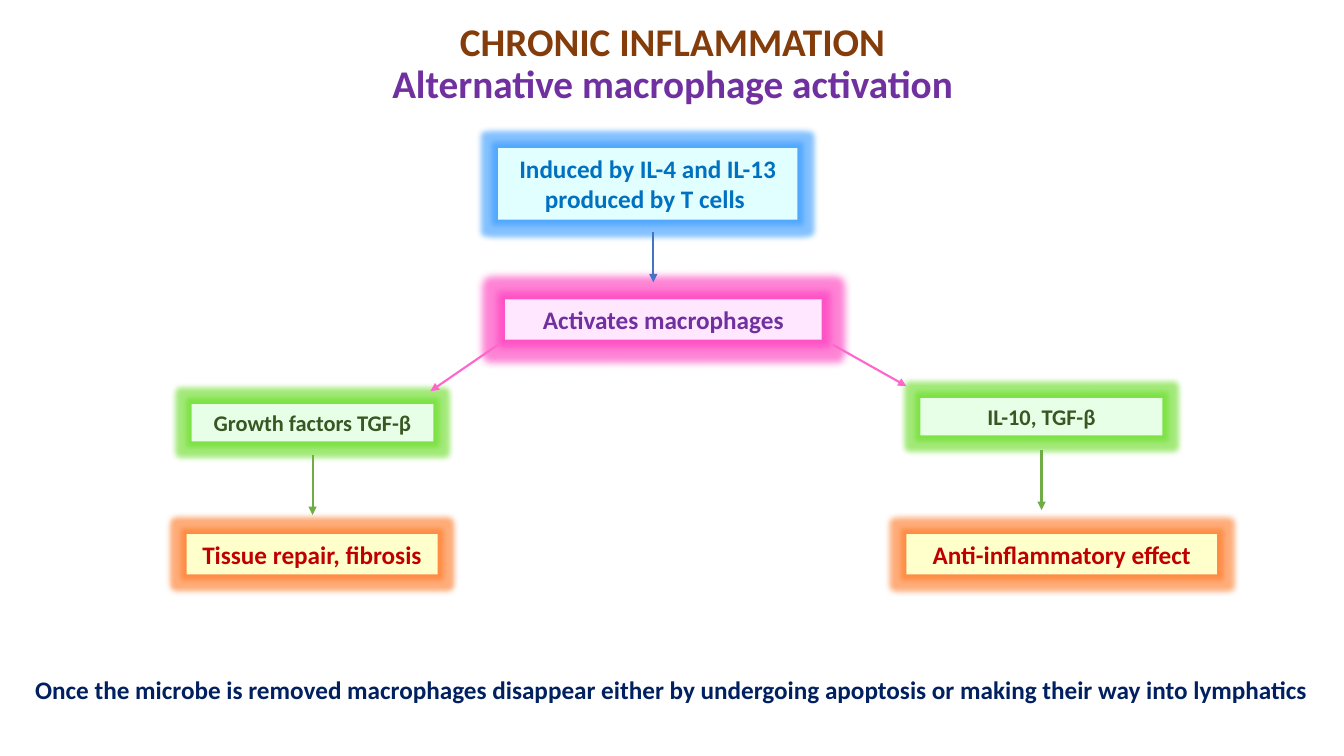
from dataclasses import dataclass

from lxml import etree
from pptx import Presentation
from pptx.dml.color import RGBColor
from pptx.enum.shapes import MSO_CONNECTOR, MSO_SHAPE
from pptx.enum.text import MSO_ANCHOR, MSO_AUTO_SIZE, PP_ALIGN
from pptx.oxml.ns import qn
from pptx.util import Inches, Pt

RECT = MSO_SHAPE.RECTANGLE
STRAIGHT = MSO_CONNECTOR.STRAIGHT
TOP, MIDDLE = MSO_ANCHOR.TOP, MSO_ANCHOR.MIDDLE
LEFT, CENTER = PP_ALIGN.LEFT, PP_ALIGN.CENTER
FIT_SHAPE = MSO_AUTO_SIZE.SHAPE_TO_FIT_TEXT


@dataclass(frozen=True)
class BoxStyle:
    fill: str
    text: str
    size: int
    glow: str
    radius: int = 8


@dataclass(frozen=True)
class Theme:
    font: str = "Calibri"
    title_size: int = 28
    body_size: int = 18
    line_width: float = 1.5
    title: str = "843C0B"
    subtitle: str = "7030A0"
    note: str = "002060"
    blue_arrow: str = "4472C4"
    pink_arrow: str = "FF66CC"
    green_arrow: str = "70AD47"
    trigger: BoxStyle = BoxStyle("E1FFFF", "0070C0", 18, "3399FF")
    activation: BoxStyle = BoxStyle("FFE7FF", "7030A0", 18, "FF33BB", 11)
    cytokine: BoxStyle = BoxStyle("E7FFE7", "385723", 16, "66DD22")
    outcome: BoxStyle = BoxStyle("FFFFCC", "C00000", 18, "FF7722")


class SlideBuilder:
    def __init__(self, slide, theme):
        self.s = slide
        self.theme = theme

    def add_text(self, sp, lines, size, align, anchor=TOP):
        tf = sp.text_frame
        tf.word_wrap = True
        tf.vertical_anchor = anchor
        p = tf.paragraphs[0]
        p.alignment = align
        for i, (text, color) in enumerate(lines):
            if i:
                p.add_line_break()
            r = p.add_run()
            r.text = text
            r.font.name = self.theme.font
            r.font.size = Pt(size)
            r.font.bold = True
            r.font.color.rgb = RGBColor.from_string(color)
        return tf

    def title(self, lines, *bounds):
        sp = self.s.shapes.add_textbox(*map(Inches, bounds))
        tf = self.add_text(sp, lines, self.theme.title_size, CENTER, MIDDLE)
        tf.paragraphs[0].line_spacing = 0.9

    def note(self, text, *bounds):
        sp = self.s.shapes.add_textbox(*map(Inches, bounds))
        tf = self.add_text(sp, [(text, self.theme.note)], self.theme.body_size, LEFT)
        tf.auto_size = FIT_SHAPE

    def box(self, text, style, *bounds):
        sp = self.s.shapes.add_shape(RECT, *map(Inches, bounds))
        sp.shadow.inherit = False
        sp.fill.solid()
        sp.fill.fore_color.rgb = RGBColor.from_string(style.fill)
        sp.line.fill.background()
        effects = sp._element.spPr.find(qn("a:effectLst"))
        glow = etree.SubElement(effects, qn("a:glow"), rad=str(Pt(style.radius)))
        color = etree.SubElement(glow, qn("a:srgbClr"), val=style.glow)
        etree.SubElement(color, qn("a:alpha"), val="60000")
        tf = self.add_text(sp, [(text, style.text)], style.size, CENTER)
        tf.auto_size = FIT_SHAPE

    def arrow(self, color, *ends):
        cx = self.s.shapes.add_connector(STRAIGHT, *map(Inches, ends))
        cx.line.color.rgb = RGBColor.from_string(color)
        cx.line.width = Pt(self.theme.line_width)
        props = cx._element.spPr
        etree.SubElement(props.find(qn("a:ln")), qn("a:tailEnd"), type="triangle")
        etree.SubElement(props, qn("a:effectLst"))


def main():
    prs = Presentation()
    prs.slide_width, prs.slide_height = Inches(13.33), Inches(7.5)
    theme = Theme()
    b = SlideBuilder(prs.slides.add_slide(prs.slide_layouts[6]), theme)

    b.title([("CHRONIC INFLAMMATION", theme.title),
             ("Alternative macrophage activation", theme.subtitle)],
            0.92, 0, 11.5, 1.29)

    b.box("Induced by IL-4 and IL-13 produced by T cells ", theme.trigger,
          4.94, 1.47, 2.97, 0.71)
    b.box("Activates macrophages", theme.activation, 5.01, 2.97, 3.14, 0.4)
    b.box("Growth factors TGF-β", theme.cytokine, 1.9, 4.01, 2.4, 0.37)
    b.box("IL-10, TGF-β", theme.cytokine, 9.13, 3.95, 2.4, 0.37)
    b.box("Tissue repair, fibrosis", theme.outcome, 1.85, 5.3, 2.49, 0.4)
    b.box("Anti-inflammatory effect", theme.outcome, 8.99, 5.3, 3.08, 0.4)

    b.arrow(theme.blue_arrow, 6.48, 2.3, 6.48, 2.8)
    b.arrow(theme.pink_arrow, 4.94, 3.42, 4.27, 3.88)
    b.arrow(theme.pink_arrow, 8.26, 3.42, 8.99, 3.83)
    for x, y in ((3.1, 4.51), (10.33, 4.46)):
        b.arrow(theme.green_arrow, x, y, x, y + 0.6)

    b.note("Once the microbe is removed macrophages disappear either by "
           "undergoing apoptosis or making their way into lymphatics",
           0.25, 6.64, 13.08, 0.4)

    prs.save("out.pptx")


if __name__ == "__main__":
    main()
